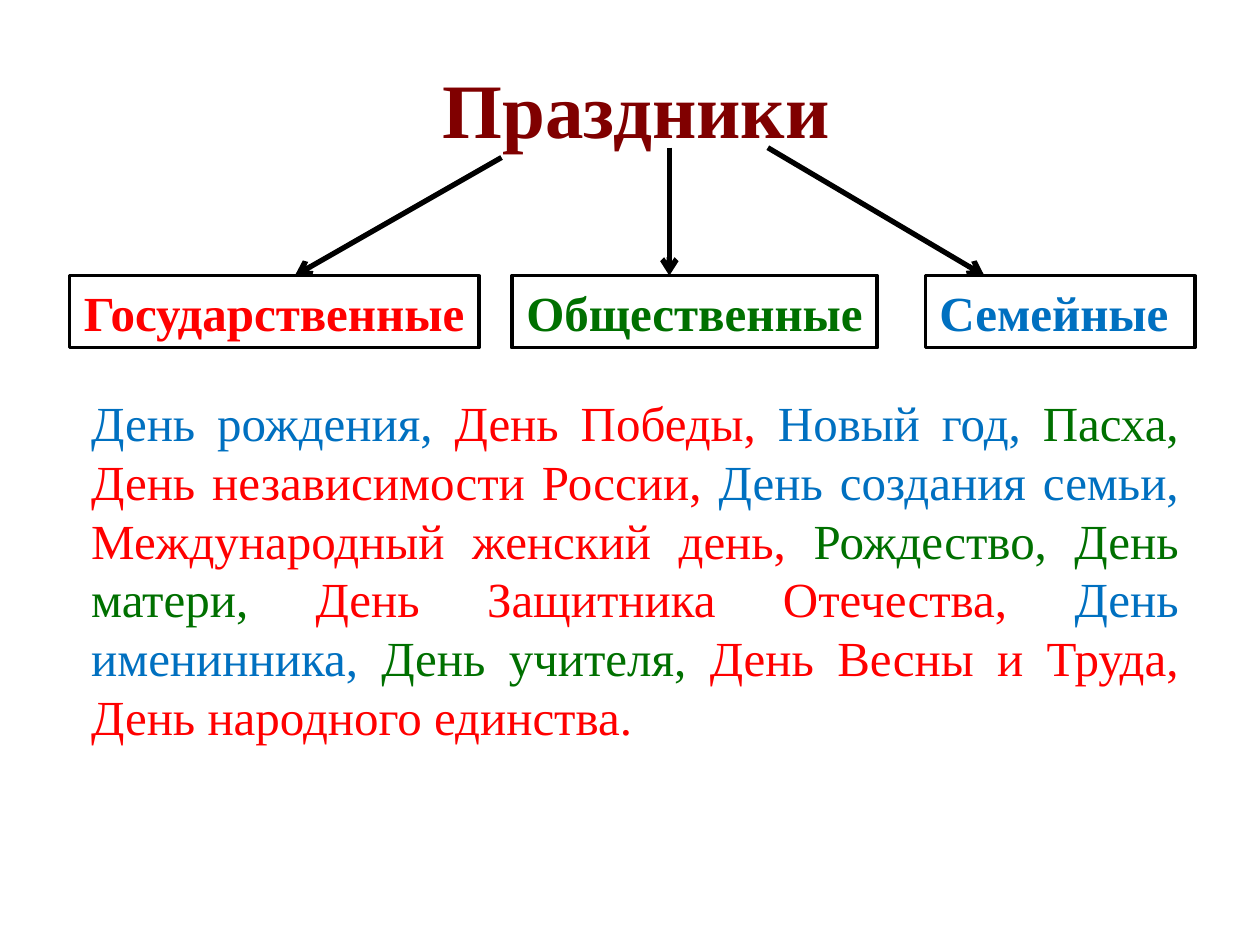
from pptx import Presentation
from pptx.dml.color import RGBColor
from pptx.enum.shapes import MSO_CONNECTOR, MSO_SHAPE
from pptx.enum.text import MSO_ANCHOR, MSO_AUTO_SIZE, PP_ALIGN
from pptx.oxml.ns import qn
from pptx.util import Pt
from lxml.etree import SubElement

HUES = {"title": "800000", "state": "FF0000", "public": "007000",
        "family": "0070C0", "line": "000000", "back": "FFFFFF"}
FONT = "Times New Roman"
TITLE = "Праздники"

# text, hue, left, width, arrow start, arrow tip x
KINDS = [
    ("Государственные", "state", 39.6, 234, (286.6, 90), 168.5),
    ("Общественные", "public", 292.5, 208.8, (382.5, 84.4), 382.5),
    ("Семейные ", "family", 528.75, 154, (438.75, 84.4), 562.5),
]
TOP, HIGH = 157.5, 41.2

DAYS = [
    ("День рождения, ", "family"),
    ("День Победы, ", "state"),
    ("Новый год, ", "family"),
    ("Пасха, ", "public"),
    ("День независимости России, ", "state"),
    ("День создания семьи, ", "family"),
    ("Международный женский день, ", "state"),
    ("Рождество, День матери, ", "public"),
    ("День Защитника Отечества, ", "state"),
    ("День именинника, ", "family"),
    ("День учителя, ", "public"),
    ("День Весны и Труда, День народного единства. ", "state"),
]


def color(key):
    return RGBColor.from_string(HUES[key])


def write(shape, runs, size=28, bold=False, align=PP_ALIGN.CENTER,
          wrap=True, grow=False):
    frame = shape.text_frame
    frame.word_wrap = wrap
    frame.vertical_anchor = MSO_ANCHOR.MIDDLE
    frame.auto_size = (MSO_AUTO_SIZE.SHAPE_TO_FIT_TEXT if grow
                       else MSO_AUTO_SIZE.NONE)
    para = frame.paragraphs[0]
    para.alignment = align
    for text, hue in runs:
        run = para.add_run()
        run.text = text
        font = run.font
        font.name, font.size, font.bold = FONT, Pt(size), bold
        font.color.rgb = color(hue)


def arrow(shapes, start, end):
    link = shapes.add_connector(MSO_CONNECTOR.STRAIGHT,
                                *map(Pt, (*start, *end)))
    link.line.color.rgb = color("line")
    link.line.width = Pt(3)
    SubElement(link.line._get_or_add_ln(), qn("a:tailEnd"), type="arrow")
    SubElement(link._element.spPr, qn("a:effectLst"))


def box(shapes, left, width):
    rect = shapes.add_shape(MSO_SHAPE.RECTANGLE,
                            *map(Pt, (left, TOP, width, HIGH)))
    rect.shadow.inherit = False
    rect.fill.solid()
    rect.fill.fore_color.rgb = color("back")
    rect.line.color.rgb = color("line")
    rect.line.width = Pt(2)
    return rect


def main():
    deck = Presentation()
    deck.slide_width, deck.slide_height = Pt(720), Pt(540)
    shapes = deck.slides.add_slide(deck.slide_layouts[6]).shapes

    head = shapes.add_textbox(Pt(39.6), Pt(16.6), Pt(648), Pt(90))
    write(head, [(TITLE, "title")], size=44, bold=True)

    for *_, start, tip in KINDS:
        arrow(shapes, start, (tip, TOP))
    for text, hue, left, width, *_ in KINDS:
        write(box(shapes, left, width), [(text, hue)], bold=True,
              wrap=False, grow=True)

    body = shapes.add_textbox(Pt(45), Pt(219.6), Pt(635.6), Pt(211))
    write(body, DAYS, align=PP_ALIGN.JUSTIFY, grow=True)

    deck.save("out.pptx")


if __name__ == "__main__":
    main()
